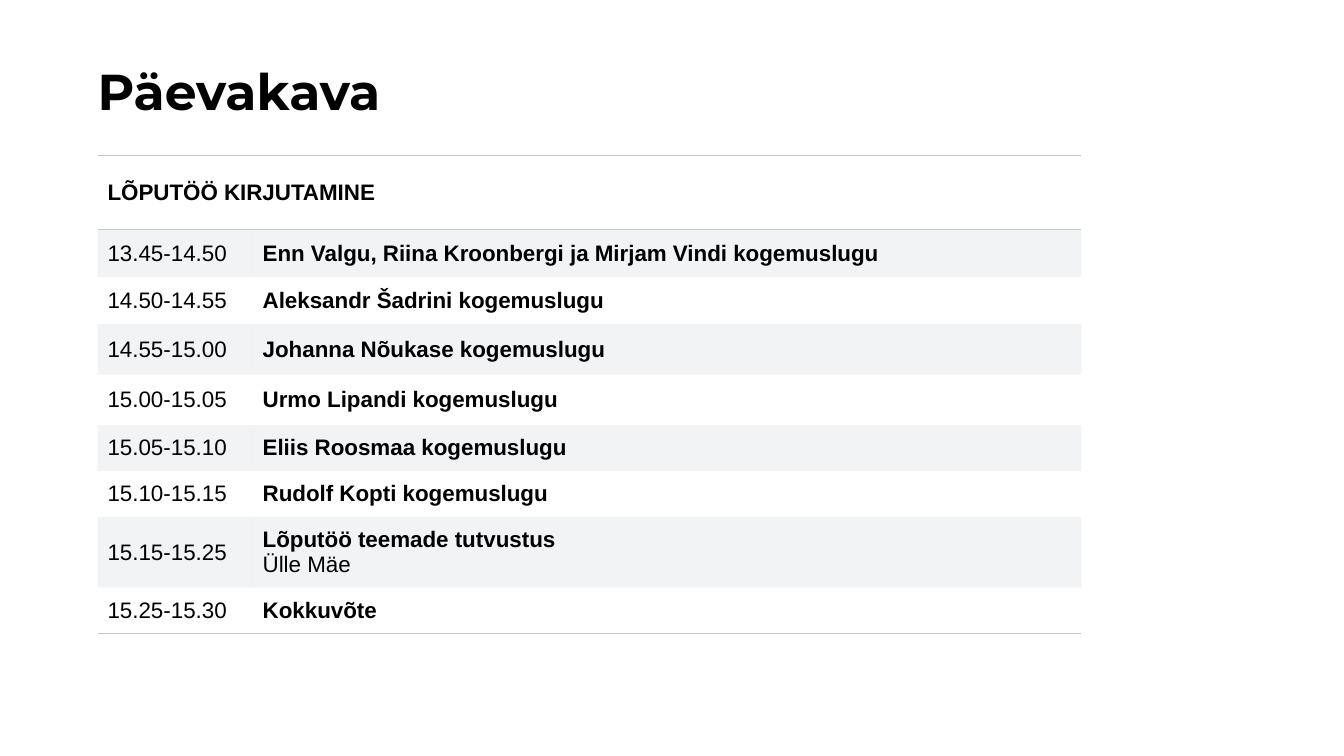
from dataclasses import dataclass

from lxml.etree import SubElement
from pptx import Presentation
from pptx.dml.color import RGBColor
from pptx.enum.text import MSO_ANCHOR, PP_ALIGN
from pptx.oxml import parse_xml
from pptx.oxml.ns import nsdecls, qn
from pptx.util import Cm, Pt

# Content: time, bold heading, optional speaker, row height in cm
TITLE = "Päevakava"
SECTION = "LÕPUTÖÖ KIRJUTAMINE"
AGENDA = [
    ("13.45-14.50", "Enn Valgu, Riina Kroonbergi ja Mirjam Vindi kogemuslugu", None, 1.19),
    ("14.50-14.55", "Aleksandr Šadrini kogemuslugu", None, 1.19),
    ("14.55-15.00", "Johanna Nõukase kogemuslugu", None, 1.27),
    ("15.00-15.05", "Urmo Lipandi kogemuslugu", None, 1.27),
    ("15.05-15.10", "Eliis Roosmaa kogemuslugu", None, 1.16),
    ("15.10-15.15", "Rudolf Kopti kogemuslugu", None, 1.16),
    ("15.15-15.25", "Lõputöö teemade tutvustus", "Ülle Mäe", 1.78),
    ("15.25-15.30", "Kokkuvõte", None, 1.16),
]
SECTION_HEIGHT = 1.88
COLUMNS = (3.91, 20.88)
LEFT = 2.46
NO_STYLE = "{2D5ABB26-0587-4C30-8999-92F81FD0307C}"


@dataclass(frozen=True)
class Theme:
    text: str = "000000"
    grey: str = "C1C6C8"
    band_alpha: int = 20
    title_font: str = "Montserrat"
    body_font: str = "Arial"
    title_size: int = 36
    body_size: int = 16


THEME = Theme()


def set_font(p, name, size, bold):
    p.font.name, p.font.size, p.font.bold = name, Pt(size), bold
    p.font.color.rgb = RGBColor.from_string(THEME.text)


def fill_cell(cell, lines, banded=False):
    """Write (text, bold) lines into a cell and shade it if banded."""
    cell.margin_left = cell.margin_right = Cm(0.25)
    cell.margin_top = cell.margin_bottom = Cm(0.25)
    cell.vertical_anchor = MSO_ANCHOR.MIDDLE
    tf = cell.text_frame
    for i, (text, bold) in enumerate(lines):
        p = tf.add_paragraph() if i else tf.paragraphs[0]
        p.text = text
        set_font(p, THEME.body_font, THEME.body_size, bold)
    if banded:
        cell.fill.solid()
        cell.fill.fore_color.rgb = RGBColor.from_string(THEME.grey)
        color = next(cell.fill._xPr.iter(qn("a:srgbClr")))
        SubElement(color, qn("a:alpha"), val=str(THEME.band_alpha * 1000))
    else:
        cell.fill.background()


def add_border(cell, side):
    cell._tc.get_or_add_tcPr().insert(0, parse_xml(
        f'<a:ln{side} {nsdecls("a")} w="12700"><a:solidFill>'
        f'<a:srgbClr val="{THEME.grey}"/></a:solidFill></a:ln{side}>'))


def main():
    prs = Presentation()
    prs.slide_width, prs.slide_height = Cm(33.87), Cm(19.05)
    s = prs.slides.add_slide(prs.slide_layouts[5])

    # Title
    title = s.shapes.title
    title.left, title.top, title.width, title.height = Cm(LEFT), Cm(1.68), Cm(23.04), Cm(3.68)
    tf = title.text_frame
    tf.margin_left = tf.margin_right = tf.margin_top = tf.margin_bottom = 0
    tf.vertical_anchor = MSO_ANCHOR.TOP
    tf.word_wrap = True
    p = tf.paragraphs[0]
    p.text = TITLE
    p.alignment = PP_ALIGN.LEFT
    p.line_spacing = 0.9
    set_font(p, THEME.title_font, THEME.title_size, True)

    # Agenda table
    heights = [SECTION_HEIGHT] + [row[-1] for row in AGENDA]
    frame = s.shapes.add_table(len(heights), len(COLUMNS), Cm(LEFT), Cm(3.91),
                               Cm(sum(COLUMNS)), Cm(sum(heights)))
    table = frame.table
    table.first_row = table.horz_banding = False
    next(table._tbl.iter(qn("a:tableStyleId"))).text = NO_STYLE
    for column, width in zip(table.columns, COLUMNS):
        column.width = Cm(width)
    for row, height in zip(table.rows, heights):
        row.height = Cm(height)

    # Section heading across both columns
    table.cell(0, 0).merge(table.cell(0, 1))
    fill_cell(table.cell(0, 0), [(SECTION, True)])

    # Sessions, every other row shaded
    for i, (time, heading, speaker, _) in enumerate(AGENDA, start=1):
        lines = [(heading, True)] + ([(speaker, False)] if speaker else [])
        fill_cell(table.cell(i, 0), [(time, False)], banded=i % 2 == 1)
        fill_cell(table.cell(i, 1), lines, banded=i % 2 == 1)

    # Rules around the section heading and below the last session
    for col in range(len(COLUMNS)):
        for row, side in ((0, "B"), (0, "T"), (len(AGENDA), "B")):
            add_border(table.cell(row, col), side)

    prs.save("out.pptx")


if __name__ == "__main__":
    main()
